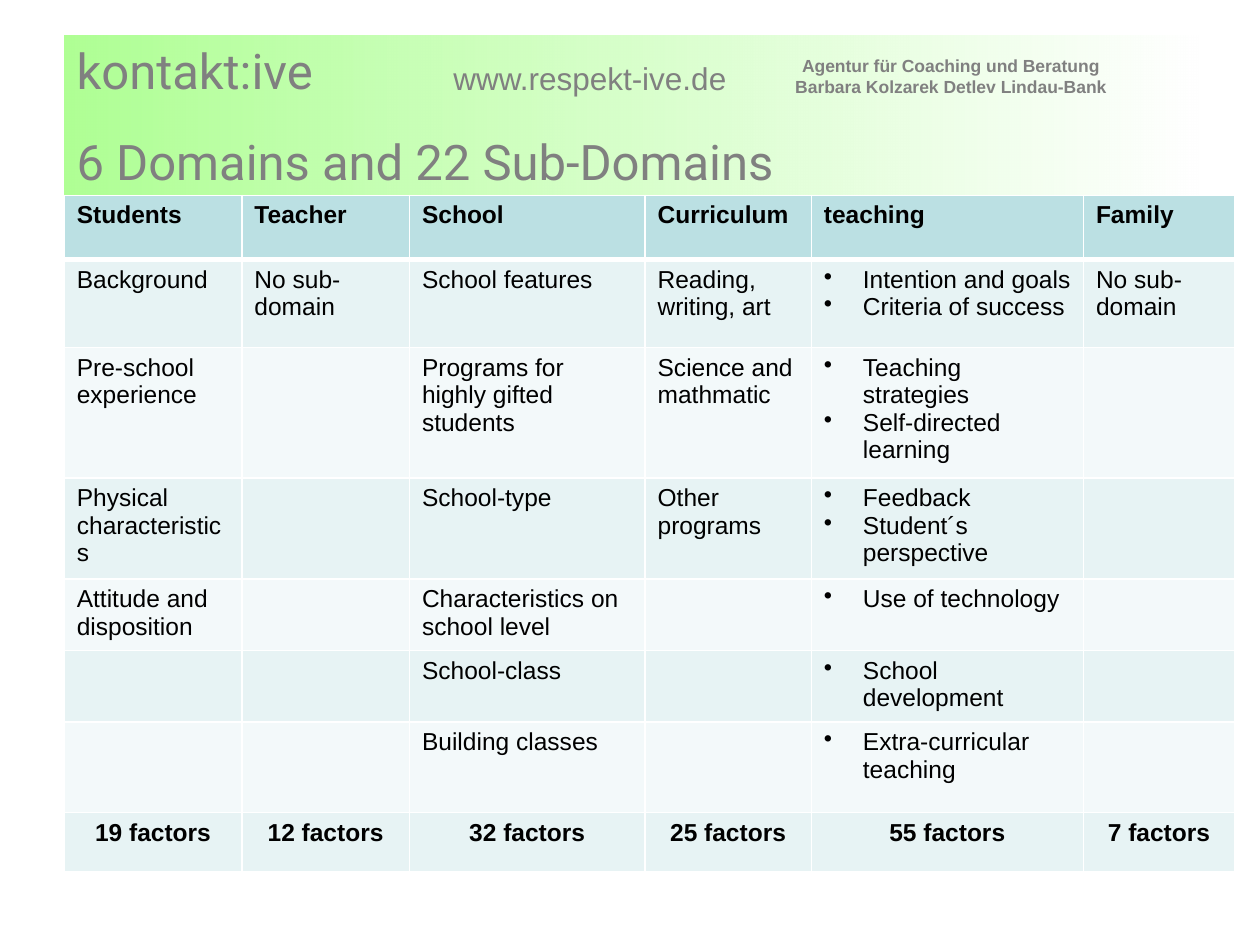
import pptx
import pptx.dml.color
import pptx.enum.text
import pptx.enum.shapes
import pptx.oxml
import pptx.oxml.ns
import pptx.util
from lxml import etree

Inches = pptx.util.Inches
Pt = pptx.util.Pt
Align = pptx.enum.text.PP_ALIGN
Anchor = pptx.enum.text.MSO_ANCHOR
qn = pptx.oxml.ns.qn


def colour(value):
    return pptx.dml.color.RGBColor.from_string(value)


def write(frame, text, size=14, font="Arial", color="000000", bold=False,
          align=Align.LEFT, bullet=False):
    for index, line in enumerate(text.split("\n")):
        paragraph = frame.paragraphs[0] if index == 0 else frame.add_paragraph()
        paragraph.alignment = align
        if bullet:
            properties = paragraph._p.get_or_add_pPr()
            properties.set("marL", str(Inches(0.31)))
            properties.set("indent", str(-Inches(0.31)))
            etree.SubElement(properties, qn("a:buChar"), char="•")
        run = paragraph.add_run()
        run.text = line
        run.font.size = Pt(size)
        run.font.name = font
        run.font.bold = bold
        run.font.color.rgb = colour(color)


class DomainSlide:
    """Holds the style and the current slide, and adds its elements."""

    grey = "808080"
    heading_font = "Roboto"
    header_fill = "BBE0E3"
    band_fills = ("F3F9FA", "E7F3F4")
    fade = (("66FF33", 52), ("FFFFFF", 50))

    def __init__(self, presentation):
        self.slide = presentation.slides.add_slide(presentation.slide_layouts[6])

    def banner(self, text, top, height):
        banner = self.slide.shapes.add_shape(
            pptx.enum.shapes.MSO_SHAPE.RECTANGLE,
            Inches(0.51), Inches(top), Inches(9), Inches(height))
        banner.shadow.inherit = False
        banner.line.fill.background()
        banner.fill.gradient()
        banner.fill.gradient_angle = 0
        for stop, position, (shade, opacity) in zip(banner.fill.gradient_stops, (0, 1), self.fade):
            stop.position = position
            stop.color.rgb = colour(shade)
        for shade, (_, opacity) in zip(banner._element.spPr.iter(qn("a:srgbClr")), self.fade):
            etree.SubElement(shade, qn("a:alpha"), val=str(opacity * 1000))
        frame = banner.text_frame
        frame.word_wrap = True
        frame.vertical_anchor = Anchor.MIDDLE
        write(frame, text, size=28, font=self.heading_font, color=self.grey)

    def label(self, text, left, top, width, height, **style):
        box = self.slide.shapes.add_textbox(
            Inches(left), Inches(top), Inches(width), Inches(height))
        box.text_frame.word_wrap = False
        box.text_frame.auto_size = pptx.enum.text.MSO_AUTO_SIZE.SHAPE_TO_FIT_TEXT
        write(box.text_frame, text, color=self.grey, **style)

    def border(self, cell, side, width):
        line = etree.SubElement(cell._tc.get_or_add_tcPr(), qn("a:ln" + side), w=str(Pt(width)))
        fill = etree.SubElement(line, qn("a:solidFill"))
        etree.SubElement(fill, qn("a:srgbClr"), val="FFFFFF")

    def table(self, rows, widths, heights, left, top, bullet_column):
        table = self.slide.shapes.add_table(
            len(rows), len(widths), Inches(left), Inches(top),
            Inches(sum(widths)), Inches(sum(heights))).table
        for column, width in zip(table.columns, widths):
            column.width = Inches(width)
        for row, height in zip(table.rows, heights):
            row.height = Inches(height)
        last = len(rows) - 1
        for r, texts in enumerate(rows):
            for c, text in enumerate(texts):
                cell = table.cell(r, c)
                for side in "LRTB":
                    self.border(cell, side, 3 if (r, side) in ((0, "B"), (1, "T")) else 1)
                cell.fill.solid()
                cell.fill.fore_color.rgb = colour(self.band_fills[r % 2] if r else self.header_fill)
                if text:
                    write(cell.text_frame, text, bold=r in (0, last),
                          align=Align.CENTER if r == last else Align.LEFT,
                          bullet=c == bullet_column and 0 < r < last)


def main():
    presentation = pptx.Presentation()
    presentation.slide_width = Inches(10)
    presentation.slide_height = Inches(7.5)
    domains = DomainSlide(presentation)

    domains.banner("kontakt:ive", 0.28, 0.55)
    domains.label("Agentur für Coaching und Beratung\nBarbara Kolzarek Detlev Lindau-Bank",
                  6.19, 0.39, 2.71, 0.44, size=10, bold=True, align=Align.CENTER)
    domains.label("www.respekt-ive.de", 3.5, 0.42, 2.4, 0.4, size=18)
    domains.banner("6 Domains and 22 Sub-Domains", 0.84, 0.87)

    rows = [
        ("Students", "Teacher", "School", "Curriculum", "teaching", "Family"),
        ("Background", "No sub-domain", "School features", "Reading, writing, art",
         "Intention and goals\nCriteria of success", "No sub-domain"),
        ("Pre-school experience", "", "Programs for highly gifted students",
         "Science and mathmatic", "Teaching strategies\nSelf-directed learning", ""),
        ("Physical characteristics", "", "School-type", "Other programs",
         "Feedback\nStudent´s perspective", ""),
        ("Attitude and disposition", "", "Characteristics on school level", "",
         "Use of technology", ""),
        ("", "", "School-class", "", "School development", ""),
        ("", "", "Building classes", "", "Extra-curricular teaching", ""),
        [f"{count} factors" for count in (19, 12, 32, 25, 55, 7)],
    ]
    domains.table(rows, widths=(1.41, 1.33, 1.87, 1.32, 2.16, 1.2),
                  heights=(0.51, 0.7, 0.93, 0.72, 0.51, 0.51, 0.72, 0.47),
                  left=0.51, top=1.55, bullet_column=4)
    presentation.save("out.pptx")


if __name__ == "__main__":
    main()
